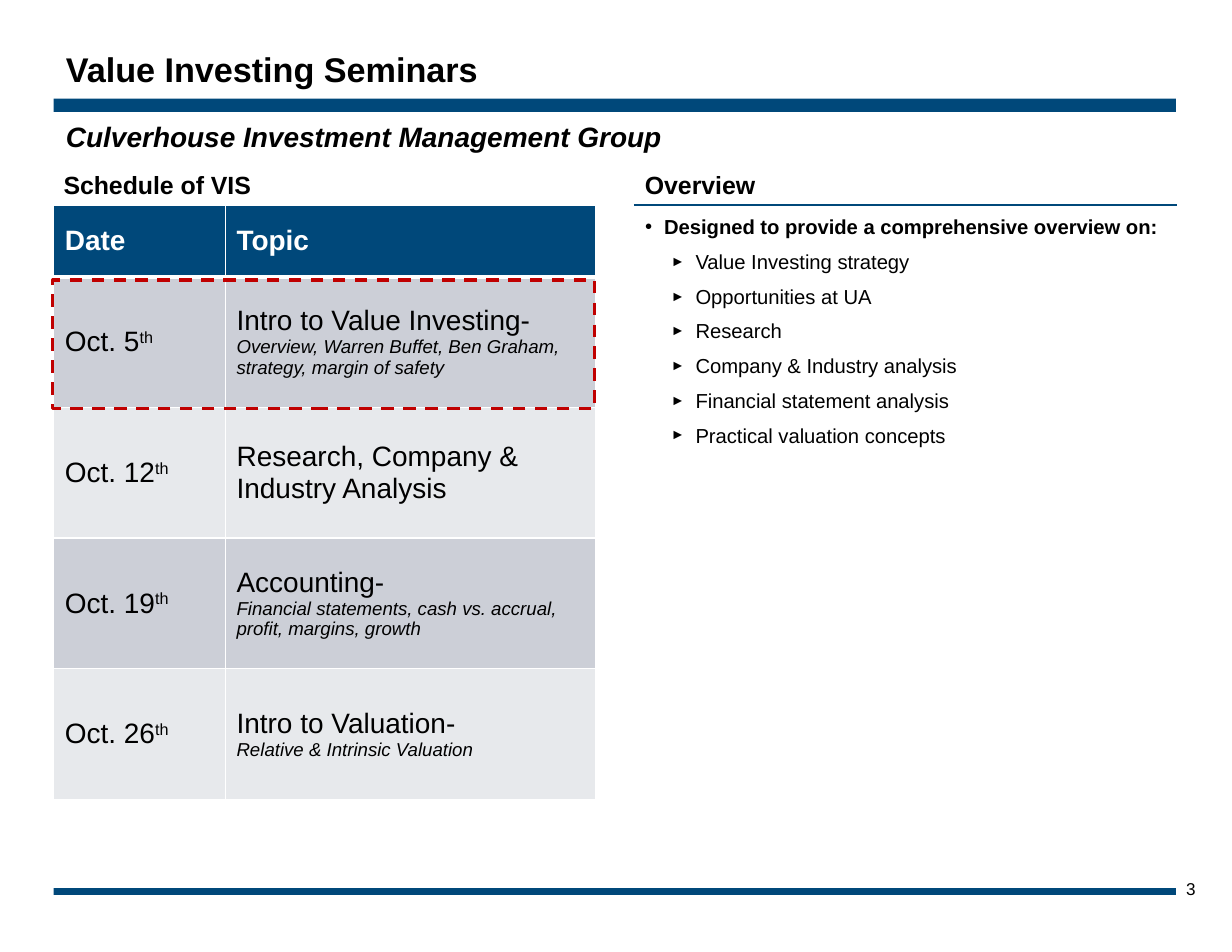
from lxml import etree
from pptx import Presentation
from pptx import util as u
from pptx.dml.color import RGBColor
from pptx.enum import dml, shapes, text
from pptx.oxml.ns import qn

Pt = u.Pt
COLORS = {"navy": "00487A", "black": "000000", "white": "FFFFFF", "red": "C00000",
          "dark band": "CCCFD7", "light band": "E7E9EC"}
FONT = "Arial"

TITLE = "Value Investing Seminars"
SUBTITLE = "Culverhouse Investment Management Group"
PAGE_NUMBER = "3"
SCHEDULE_HEADING = "Schedule of VIS"
SCHEDULE_COLUMNS = ["Date", "Topic"]
SCHEDULE = [
    ("Oct. 5", "Intro to Value Investing-",
     "Overview, Warren Buffet, Ben Graham, strategy, margin of safety"),
    ("Oct. 12", "Research, Company & Industry Analysis", ""),
    ("Oct. 19", "Accounting-",
     "Financial statements, cash vs. accrual, profit, margins, growth"),
    ("Oct. 26", "Intro to Valuation-", "Relative & Intrinsic Valuation"),
]
OVERVIEW_HEADING = "Overview"
OVERVIEW_LEAD = "Designed to provide a comprehensive overview on:"
OVERVIEW_POINTS = [
    "Value Investing strategy", "Opportunities at UA", "Research",
    "Company & Industry analysis", "Financial statement analysis",
    "Practical valuation concepts",
]

LEFT, RIGHT_COLUMN, WIDTH, COLUMN_WIDTH = 34.5, 407.5, 721.5, 348.5
HEADING_TOP, HEADING_HEIGHT = 108.7, 23
TABLE_TOP = HEADING_TOP + HEADING_HEIGHT
HEADER_HEIGHT, ROW_HEIGHT = 46.2, 84
DATE_WIDTH = 110.4
ANCHOR = text.MSO_ANCHOR


def color(name):
    return RGBColor.from_string(COLORS[name])


def write(paragraph, words, size=18, fill="black", bold=False, italic=False, raised=False):
    run = paragraph.add_run()
    run.text = words
    font = run.font
    font.name, font.size, font.bold, font.italic = FONT, Pt(size), bold, italic
    font.color.rgb = color(fill)
    if raised:
        font._element.set("baseline", "30000")


def place(shape, left, top, width, height):
    shape.left, shape.top, shape.width, shape.height = map(Pt, (left, top, width, height))


def prepare(frame, anchor=ANCHOR.TOP, margins=(7.9, 4, 7.9, 4)):
    frame.word_wrap = True
    frame.auto_size = text.MSO_AUTO_SIZE.NONE
    frame.vertical_anchor = anchor
    (frame.margin_left, frame.margin_top,
     frame.margin_right, frame.margin_bottom) = map(Pt, margins)
    return frame.paragraphs[0]


def set_bullet(paragraph, character=None, left=0, hanging=0, percent=100):
    """Set the indent and bullet; without a character the bullet is switched off."""
    properties = paragraph._p.get_or_add_pPr()
    properties.set("marL", str(Pt(left)))
    properties.set("indent", str(-Pt(hanging)))
    paragraph.alignment = text.PP_ALIGN.LEFT
    paragraph.space_before = Pt(0)
    if character is None:
        etree.SubElement(properties, qn("a:buNone"))
        return
    etree.SubElement(properties, qn("a:buSzPct"), val=str(percent * 1000))
    etree.SubElement(properties, qn("a:buFont"), typeface=FONT)
    etree.SubElement(properties, qn("a:buChar"), char=character)


def add_rectangle(slide, left, top, width, height):
    shape = slide.shapes.add_shape(
        shapes.MSO_SHAPE.RECTANGLE, *map(Pt, (left, top, width, height)))
    shape.shadow.inherit = False
    return shape


def add_bar(slide, top, height):
    bar = add_rectangle(slide, LEFT, top, WIDTH, height)
    bar.fill.solid()
    bar.fill.fore_color.rgb = color("navy")
    bar.line.fill.background()


def add_text_box(slide, words, left, top, width, height, size, bold=False, **frame_format):
    box = slide.shapes.add_textbox(*map(Pt, (left, top, width, height)))
    write(prepare(box.text_frame, **frame_format), words, size=size, bold=bold)


def add_heading(slide, words, left):
    add_text_box(slide, words, left, HEADING_TOP, COLUMN_WIDTH, HEADING_HEIGHT, 16, bold=True,
                 anchor=ANCHOR.BOTTOM, margins=(7.2, 0, 7.2, 3.6))


def format_cell(cell, fill, bottom=1):
    cell.vertical_anchor = ANCHOR.MIDDLE
    properties = cell._tc.get_or_add_tcPr()
    for side, width in (("L", 1), ("R", 1), ("T", 1), ("B", bottom)):
        border = etree.SubElement(properties, qn("a:ln" + side), w=str(Pt(width)))
        solid = etree.SubElement(border, qn("a:solidFill"))
        etree.SubElement(solid, qn("a:srgbClr"), val=COLORS["white"])
    cell.fill.solid()
    cell.fill.fore_color.rgb = color(fill)
    return cell.text_frame


def add_schedule(slide):
    height = HEADER_HEIGHT + ROW_HEIGHT * len(SCHEDULE)
    table = slide.shapes.add_table(
        len(SCHEDULE) + 1, len(SCHEDULE_COLUMNS),
        *map(Pt, (LEFT, TABLE_TOP, COLUMN_WIDTH, height))).table
    table.columns[0].width = Pt(DATE_WIDTH)
    table.columns[1].width = Pt(COLUMN_WIDTH - DATE_WIDTH)
    table.rows[0].height = Pt(HEADER_HEIGHT)
    for column, label in enumerate(SCHEDULE_COLUMNS):
        frame = format_cell(table.cell(0, column), "navy", bottom=3)
        write(frame.paragraphs[0], label, fill="white", bold=True)
    for row, (date, topic, detail) in enumerate(SCHEDULE, start=1):
        table.rows[row].height = Pt(ROW_HEIGHT)
        band = "dark band" if row % 2 else "light band"
        date_line = format_cell(table.cell(row, 0), band).paragraphs[0]
        write(date_line, date)
        write(date_line, "th", raised=True)
        frame = format_cell(table.cell(row, 1), band)
        write(frame.paragraphs[0], topic)
        if detail:
            write(frame.add_paragraph(), detail, size=12, italic=True)


def fill_overview(body):
    place(body, 406.8, 134, COLUMN_WIDTH, 380)
    frame = body.text_frame
    lead = prepare(frame)
    set_bullet(lead, "•", left=12.2, hanging=12.2)
    lead.space_after = Pt(6.7)
    write(lead, OVERVIEW_LEAD, size=13, bold=True)
    for point in OVERVIEW_POINTS:
        paragraph = frame.add_paragraph()
        paragraph.level = 1
        set_bullet(paragraph, "►", left=32.4, hanging=15.8, percent=70)
        paragraph.space_after = Pt(6.7)
        write(paragraph, point, size=13)


def main():
    presentation = Presentation()
    presentation.slide_width, presentation.slide_height = Pt(792), Pt(612)
    slide = presentation.slides.add_slide(
        presentation.slide_layouts.get_by_name("Two Content"))
    title, overview, subtitle = slide.placeholders

    add_bar(slide, 63.4, 8.6)
    add_bar(slide, 571, 4.3)
    add_text_box(slide, PAGE_NUMBER, 754.6, 561, 36, 22, 11)

    place(title, LEFT, 25.2, WIDTH, 38.2)
    heading = prepare(title.text_frame, anchor=ANCHOR.MIDDLE)
    heading.alignment = text.PP_ALIGN.LEFT
    write(heading, TITLE, size=22, bold=True)

    place(subtitle, LEFT, 64.8, WIDTH, 36.7)
    line = prepare(subtitle.text_frame, margins=(7.9, 12.2, 7.9, 4))
    set_bullet(line)
    write(line, SUBTITLE, bold=True, italic=True)

    fill_overview(overview)
    add_schedule(slide)
    add_heading(slide, SCHEDULE_HEADING, LEFT - 0.7)
    add_heading(slide, OVERVIEW_HEADING, RIGHT_COLUMN)

    rule = slide.shapes.add_connector(
        shapes.MSO_CONNECTOR.STRAIGHT, Pt(RIGHT_COLUMN), Pt(TABLE_TOP),
        Pt(RIGHT_COLUMN + COLUMN_WIDTH + 0.7), Pt(TABLE_TOP))
    rule.line.color.rgb = color("navy")
    rule.line.width = Pt(1)
    etree.SubElement(rule._element.spPr, qn("a:effectLst"))

    highlight = add_rectangle(slide, LEFT - 0.5, 180, COLUMN_WIDTH, 82.6)
    highlight.fill.background()
    highlight.line.color.rgb = color("red")
    highlight.line.width = Pt(2)
    highlight.line.dash_style = dml.MSO_LINE.DASH

    presentation.save("out.pptx")


if __name__ == "__main__":
    main()
